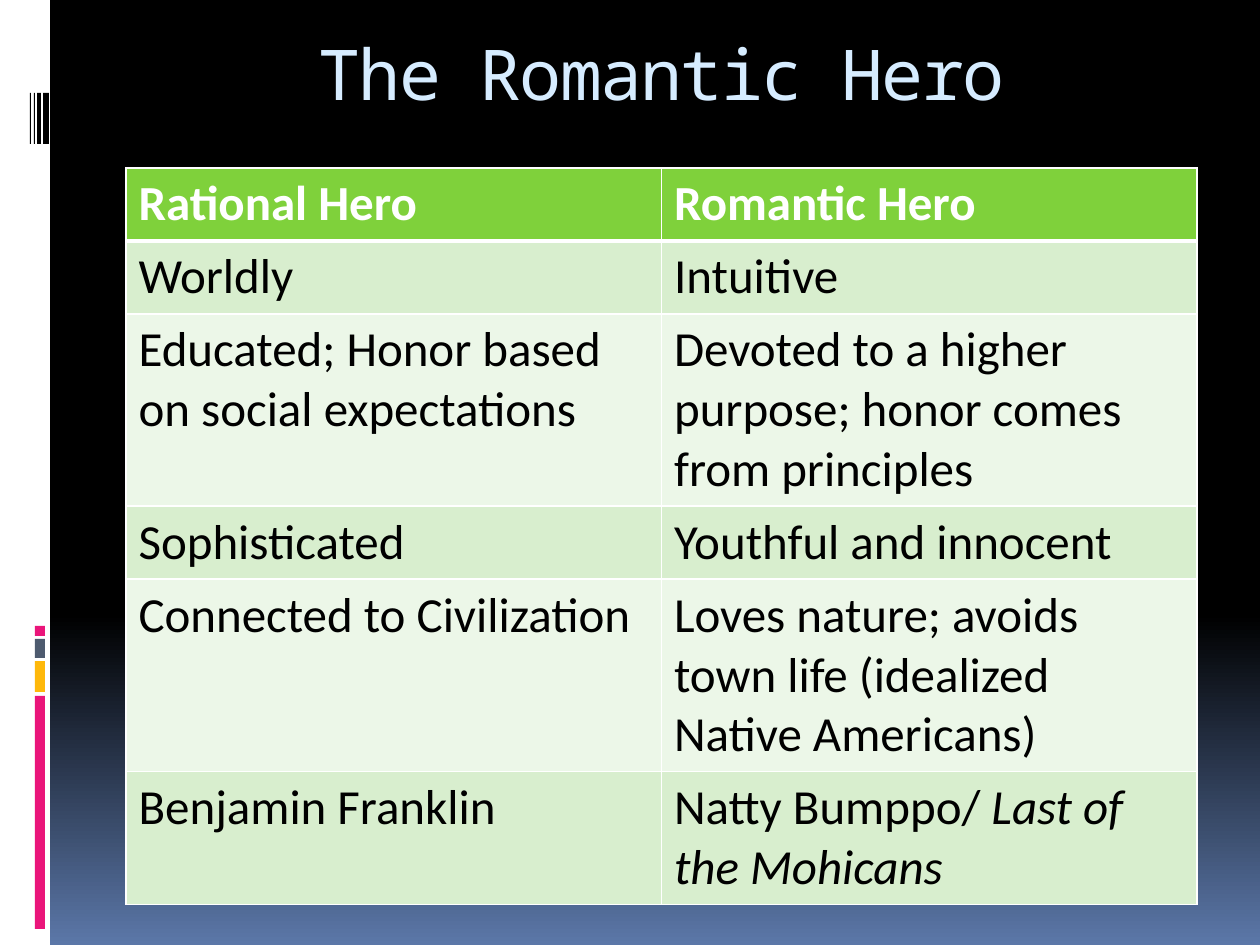
from typing import NamedTuple

from lxml.etree import SubElement
from pptx import Presentation
from pptx.dml.color import RGBColor
from pptx.enum.shapes import MSO_SHAPE
from pptx.enum.text import MSO_ANCHOR, MSO_AUTO_SIZE, PP_ALIGN
from pptx.oxml.ns import qn
from pptx.util import Emu, Pt

PX_PER_INCH = 126
WHITE, BLACK, PINK, AMBER, SLATE = "FFFFFF", "000000", "EA157A", "FEB80A", "4E5B6F"
HEADER_GREEN, BAND_GREENS = "7FD13B", ("ECF7E8", "D8EECE")


class Bar(NamedTuple):
    left: int
    top: int
    width: int
    height: int
    color: str


class Comparison(NamedTuple):
    rational: str
    romantic: str
    height: int
    work: str = ""


SIDEBAR = Bar(0, 0, 50, 945, WHITE)
COLOR_BARS = [
    Bar(35, top, 10, height, color)
    for top, height, color in (
        (696, 233, PINK), (661, 31, AMBER), (639, 19, SLATE), (626, 10, PINK))
]
BARCODE = [
    Bar(left, 93, width, 51, BLACK)
    for left, width in ((43, 6), (37, 4), (34, 1), (30, 1))
]
COMPARISONS = [
    Comparison("Rational Hero", "Romantic Hero", 73),
    Comparison("Worldly", "Intuitive", 73),
    Comparison("Educated; Honor based on social expectations",
               "Devoted to a higher purpose; honor comes from principles", 192),
    Comparison("Sophisticated", "Youthful and innocent", 73),
    Comparison("Connected to Civilization",
               "Loves nature; avoids town life (idealized Native Americans)", 192),
    Comparison("Benjamin Franklin", "Natty Bumppo/ ", 133, "Last of the Mohicans"),
]


def px(length: int) -> Emu:
    """Turn pixels into EMU."""
    return Emu(round(length * 914400 / PX_PER_INCH))


def rgb(color: str) -> RGBColor:
    """Turn a hex string into a colour."""
    return RGBColor.from_string(color)


def paint_background(slide) -> None:
    """Fade the background from black to blue at the bottom."""
    fill = slide.background.fill
    fill.gradient()
    fill.gradient_angle = 270
    for stop, position, color in zip(fill.gradient_stops, (0.65, 1), (BLACK, "5B77A8")):
        stop.position = position
        stop.color.rgb = rgb(color)


def draw_bar(slide, bar: Bar) -> None:
    """Draw one plain rectangle."""
    rectangle = slide.shapes.add_shape(
        MSO_SHAPE.RECTANGLE, px(bar.left), px(bar.top), px(bar.width), px(bar.height))
    rectangle.shadow.inherit = False
    rectangle.fill.solid()
    rectangle.fill.fore_color.rgb = rgb(bar.color)
    rectangle.line.fill.background()


def write_title(slide, wording: str) -> None:
    """Place and format the title."""
    title = slide.shapes.title
    title.left, title.top, title.width, title.height = map(px, (126, 31, 1071, 126))
    frame = title.text_frame
    frame.text = wording
    frame.auto_size = MSO_AUTO_SIZE.NONE
    frame.vertical_anchor = MSO_ANCHOR.TOP
    frame.margin_top = 0
    frame.paragraphs[0].alignment = PP_ALIGN.CENTER
    run = frame.paragraphs[0].runs[0]
    run.font.name = "Noto Sans Mono"
    run.font.size = Pt(40)
    run.font.color.rgb = rgb("D6ECFF")
    run.font._element.set("spc", "-100")


def add_borders(cell, top: int, bottom: int) -> None:
    """Give a cell white borders, with top and bottom widths in points."""
    properties = cell._tc.get_or_add_tcPr()
    for side, width in (("L", 1), ("R", 1), ("T", top), ("B", bottom)):
        border = SubElement(properties, qn(f"a:ln{side}"), w=str(Pt(width)))
        solid = SubElement(border, qn("a:solidFill"))
        SubElement(solid, qn("a:srgbClr"), val=WHITE)


def fill_cell(cell, wording: str, work: str, row: int) -> None:
    """Write and format a cell, with the title of a work in italics."""
    add_borders(cell, top=3 if row == 1 else 1, bottom=3 if row == 0 else 1)
    cell.fill.solid()
    cell.fill.fore_color.rgb = rgb(BAND_GREENS[row % 2] if row else HEADER_GREEN)
    paragraph = cell.text_frame.paragraphs[0]
    paragraph.text = wording
    if work:
        work_title = paragraph.add_run()
        work_title.text = work
        work_title.font.italic = True
    for run in paragraph.runs:
        run.font.name = "Calibri"
        run.font.size = Pt(28)
        run.font.bold = row == 0
        run.font.color.rgb = rgb(BLACK if row else WHITE)


def draw_comparisons(slide, comparisons: list[Comparison]) -> None:
    """Draw the table of the two heroes."""
    height = sum(comparison.height for comparison in comparisons)
    table = slide.shapes.add_table(
        len(comparisons), 2, px(126), px(168), px(1071), px(height)).table
    table.first_row = table.horz_banding = False
    for row, comparison in enumerate(comparisons):
        table.rows[row].height = px(comparison.height)
        fill_cell(table.cell(row, 0), comparison.rational, "", row)
        fill_cell(table.cell(row, 1), comparison.romantic, comparison.work, row)


def main() -> None:
    """Build the slide and save it."""
    presentation = Presentation()
    presentation.slide_width, presentation.slide_height = px(1260), px(945)
    slide = presentation.slides.add_slide(presentation.slide_layouts[5])
    paint_background(slide)
    for bar in (SIDEBAR, *COLOR_BARS, *BARCODE):
        draw_bar(slide, bar)
    write_title(slide, "The Romantic Hero")
    draw_comparisons(slide, COMPARISONS)
    presentation.save("out.pptx")


if __name__ == "__main__":
    main()
